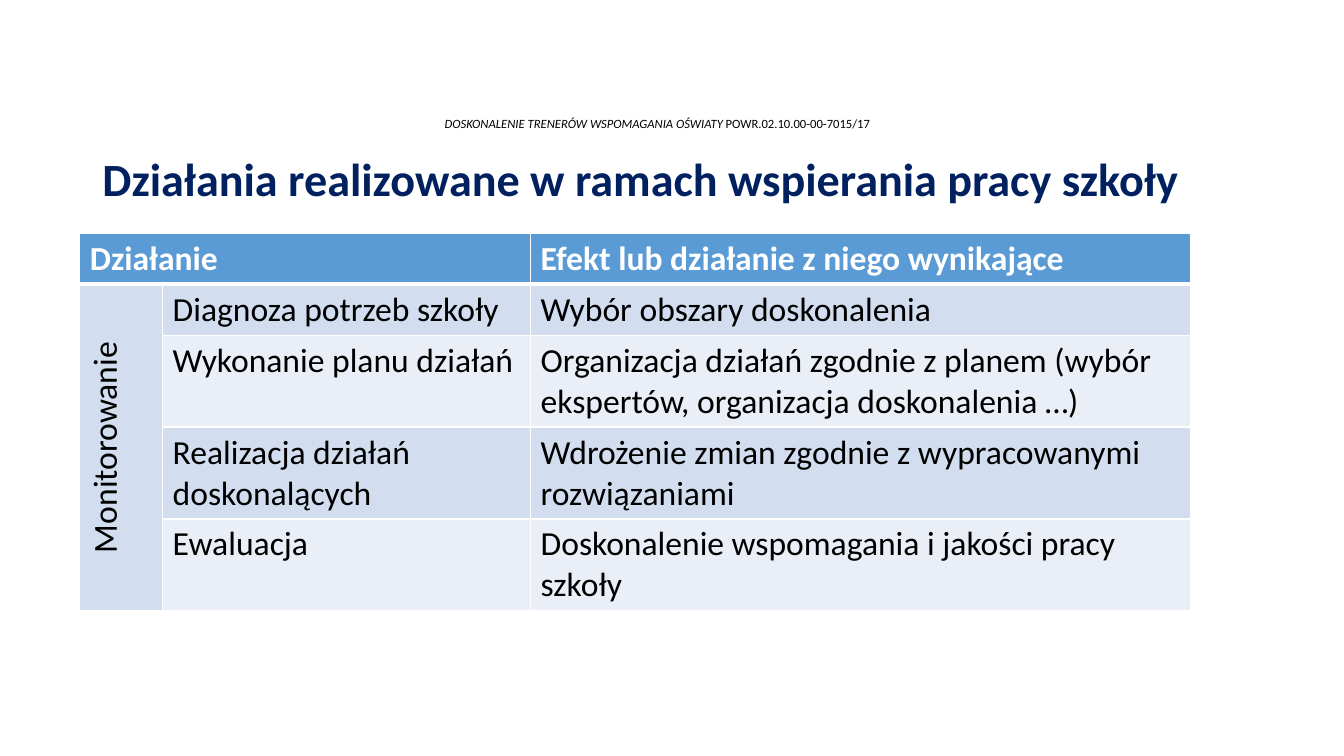
from dataclasses import dataclass

from lxml import etree
from pptx import Presentation
from pptx import util as u
from pptx.dml.color import RGBColor
from pptx.enum import text as t
from pptx.oxml.ns import qn

FONT = "Calibri"
HEX = {
    "black": "000000",
    "white": "FFFFFF",
    "navy": "002060",
    "head": "5B9BD5",
    "dark": "D2DEEF",
    "light": "EAEFF7",
}


@dataclass
class Step:
    name: str
    effect: str
    high: float


TALL, LOW = 65.6, 36.5
STEPS = [
    Step("Diagnoza potrzeb szkoły", "Wybór obszary doskonalenia", LOW),
    Step("Wykonanie planu działań",
         "Organizacja działań zgodnie z planem (wybór ekspertów, organizacja doskonalenia …)", TALL),
    Step("Realizacja działań doskonalących",
         "Wdrożenie zmian zgodnie z wypracowanymi rozwiązaniami", TALL),
    Step("Ewaluacja", "Doskonalenie wspomagania i jakości pracy szkoły", TALL),
]
WIDTHS = [59.2, 262.8, 471.6]


def write(frame, words: str, *, size: float = 24, color: str = "black", bold: bool = False,
          italic: bool = False, align=t.PP_ALIGN.LEFT, lines: float = 1.0) -> None:
    """Add a run to the first paragraph of a text frame."""
    para = frame.paragraphs[0]
    para.alignment = align
    para.line_spacing = lines
    run = para.add_run()
    run.text = words
    font = run.font
    font.name, font.size = FONT, u.Pt(size)
    font.bold, font.italic = bold, italic
    font.color.rgb = RGBColor.from_string(HEX[color])


def paint(cell, fill: str, top: float = 1, base: float = 1) -> None:
    """Fill a cell and give it white borders."""
    cell.fill.solid()
    cell.fill.fore_color.rgb = RGBColor.from_string(HEX[fill])
    props = cell._tc.get_or_add_tcPr()
    sides = [("a:lnL", 1), ("a:lnR", 1), ("a:lnT", top), ("a:lnB", base)]
    for spot, (tag, wide) in enumerate(sides):
        line = etree.Element(qn(tag), w=str(u.Pt(wide)))
        solid = etree.SubElement(line, qn("a:solidFill"))
        etree.SubElement(solid, qn("a:srgbClr"), val=HEX["white"])
        props.insert(spot, line)


def main() -> None:
    deck = Presentation()
    deck.slide_width, deck.slide_height = u.Pt(960), u.Pt(540)
    slide = deck.slides.add_slide(deck.slide_layouts[5])

    # Project line
    note = slide.shapes.add_textbox(u.Pt(57), u.Pt(80), u.Pt(825), u.Pt(18)).text_frame
    note.word_wrap = True
    note.vertical_anchor = t.MSO_ANCHOR.MIDDLE
    for words, slant in [("DOSKONALENIE TRENERÓW WSPOMAGANIA OŚWIATY ", True),
                         ("POWR.02.10.00-00-7015/17", False)]:
        write(note, words, size=9, italic=slant, align=t.PP_ALIGN.CENTER, lines=0.9)

    # Title
    title = slide.shapes.title
    title.left, title.top = u.Pt(66), u.Pt(93.6)
    title.width, title.height = u.Pt(828), u.Pt(72.7)
    frame = title.text_frame
    frame.auto_size = t.MSO_AUTO_SIZE.NONE
    frame.vertical_anchor = t.MSO_ANCHOR.MIDDLE
    write(frame, "Działania realizowane w ramach wspierania pracy szkoły",
          size=33, color="navy", bold=True, lines=0.9)

    # Table grid
    highs = [LOW] + [step.high for step in STEPS]
    table = slide.shapes.add_table(len(highs), len(WIDTHS), u.Pt(57), u.Pt(166.5),
                                   u.Pt(sum(WIDTHS)), u.Pt(sum(highs))).table
    table.horz_banding = False
    for col, wide in zip(table.columns, WIDTHS):
        col.width = u.Pt(wide)
    for row, high in zip(table.rows, highs):
        row.height = u.Pt(high)
    table.cell(0, 0).merge(table.cell(0, 1))
    table.cell(1, 0).merge(table.cell(len(STEPS), 0))

    # Header row
    for cell in table.rows[0].cells:
        paint(cell, "head", base=3)
    for col, words in [(0, "Działanie"), (2, "Efekt lub działanie z niego wynikające")]:
        write(table.cell(0, col).text_frame, words, color="white", bold=True)

    # Steps and their effects
    for row, step in enumerate(STEPS, 1):
        top = 3 if row == 1 else 1
        paint(table.cell(row, 0), "dark", top=top)
        for col, words in enumerate([step.name, step.effect], 1):
            cell = table.cell(row, col)
            paint(cell, "dark" if row % 2 else "light", top=top)
            write(cell.text_frame, words)

    # Upright side label
    side = table.cell(1, 0)
    side._tc.get_or_add_tcPr().set("vert", "vert270")
    write(side.text_frame, "Monitorowanie", align=t.PP_ALIGN.CENTER)

    deck.save("out.pptx")


if __name__ == "__main__":
    main()
